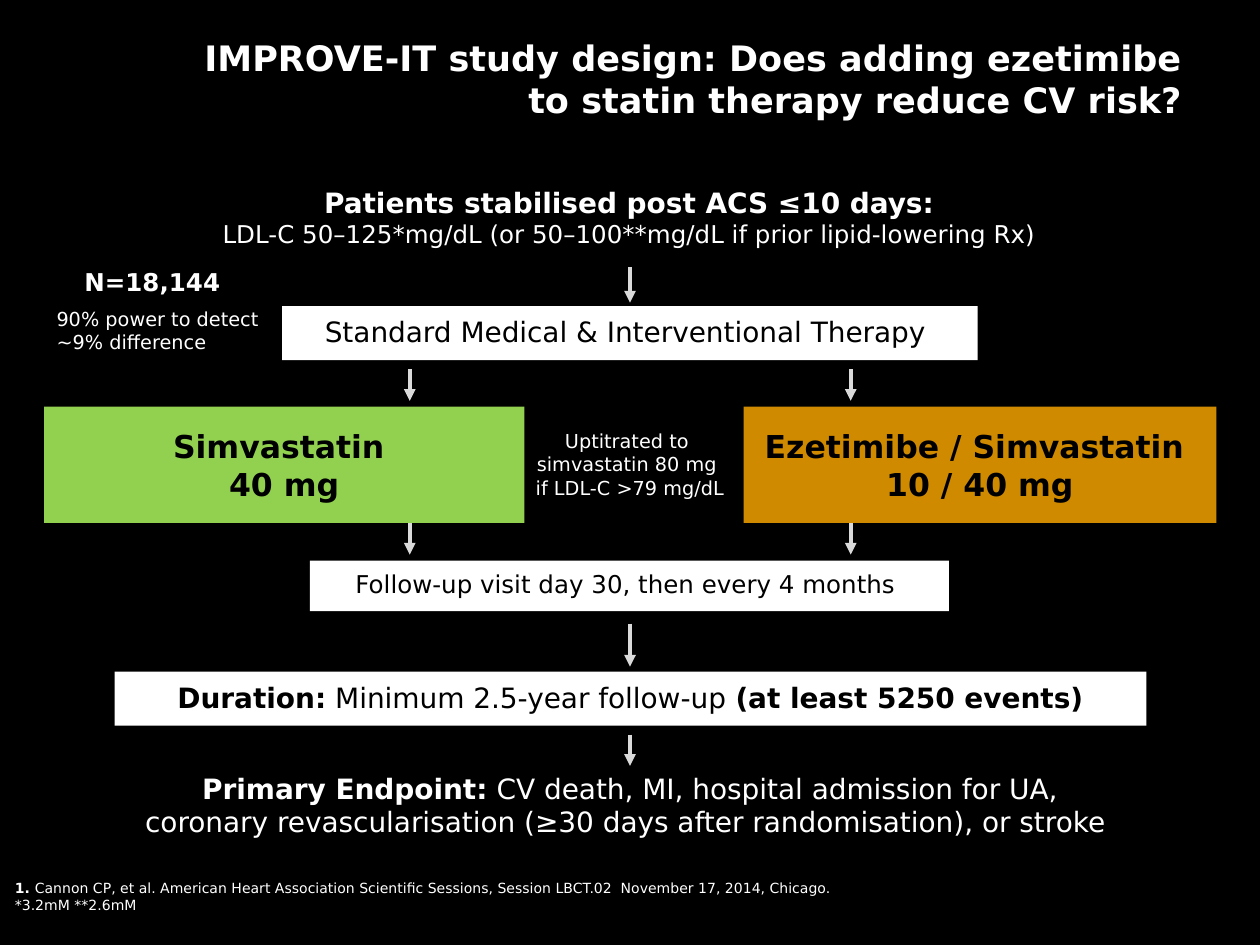
"""Build the IMPROVE-IT study design slide."""
import dataclasses
import typing

import lxml.etree
import pptx
import pptx.dml.color
import pptx.enum.shapes
import pptx.enum.text
import pptx.oxml.ns
import pptx.util

Cm = pptx.util.Cm
Align = pptx.enum.text.PP_ALIGN
Anchor = pptx.enum.text.MSO_ANCHOR
Fit = pptx.enum.text.MSO_AUTO_SIZE
Shape = pptx.enum.shapes.MSO_SHAPE
qn = pptx.oxml.ns.qn

BLACK = pptx.dml.color.RGBColor(0x00, 0x00, 0x00)
WHITE = pptx.dml.color.RGBColor(0xFF, 0xFF, 0xFF)
GREEN = pptx.dml.color.RGBColor(0x92, 0xD0, 0x50)
ORANGE = pptx.dml.color.RGBColor(0xCF, 0x8A, 0x00)
GREY = pptx.dml.color.RGBColor(0xDA, 0xDA, 0xDA)
FONT = "DejaVu Sans"
NO_INSETS = (0, 0, 0, 0)
BAR_INSETS = (0.25, 0.18, 0.25, 0.23)


class Span(typing.NamedTuple):
    text: str
    size: float
    bold: bool = False


@dataclasses.dataclass
class Box:
    place: tuple[float, float, float, float]
    paras: list[list[Span]]
    align: Align = Align.CENTER
    color: pptx.dml.color.RGBColor = WHITE
    fill: pptx.dml.color.RGBColor | None = None
    shape: Shape = Shape.RECTANGLE
    anchor: Anchor = Anchor.TOP
    insets: tuple[float, float, float, float] = (0.25, 0.13, 0.25, 0.13)
    wrap: bool = True
    fit: Fit = Fit.SHAPE_TO_FIT_TEXT


class Arrow(typing.NamedTuple):
    x: float
    top: float
    bottom: float


def set_all(target: typing.Any, values: dict[str, typing.Any]) -> None:
    """Set every named attribute on the target."""
    for name, value in values.items():
        setattr(target, name, value)


def write_text(shape: typing.Any, box: Box) -> None:
    """Place the shape and write the formatted paragraphs of the box."""
    set_all(shape, dict(zip(("left", "top", "width", "height"), map(Cm, box.place))))
    frame = shape.text_frame
    margins = ("margin_left", "margin_top", "margin_right", "margin_bottom")
    set_all(frame, dict(zip(margins, map(Cm, box.insets))))
    set_all(frame, {"word_wrap": box.wrap, "auto_size": box.fit, "vertical_anchor": box.anchor})
    for index, spans in enumerate(box.paras):
        para = frame.add_paragraph() if index else frame.paragraphs[0]
        para.alignment = box.align
        for span in spans:
            for number, line in enumerate(span.text.split("\n")):
                if number:
                    para.add_line_break()
                run = para.add_run()
                run.text = line
                set_all(run.font, {"name": FONT, "size": pptx.util.Pt(span.size), "bold": span.bold})
                run.font.color.rgb = box.color


def draw_box(page: typing.Any, box: Box) -> None:
    """Draw a filled shape, or a text box when there is no fill."""
    place = [Cm(length) for length in box.place]
    if box.fill is None:
        shape = page.shapes.add_textbox(*place)
    else:
        shape = page.shapes.add_shape(box.shape, *place)
        shape.shadow.inherit = False
        shape.fill.solid()
        shape.fill.fore_color.rgb = box.fill
        shape.line.fill.background()
        if box.shape == Shape.ROUNDED_RECTANGLE:
            shape.adjustments[0] = 0
    write_text(shape, box)


def draw_arrow(page: typing.Any, arrow: Arrow) -> None:
    """Draw a vertical arrow pointing down."""
    connector = page.shapes.add_connector(
        pptx.enum.shapes.MSO_CONNECTOR.STRAIGHT,
        Cm(arrow.x), Cm(arrow.top), Cm(arrow.x), Cm(arrow.bottom),
    )
    connector.line.color.rgb = GREY
    connector.line.width = pptx.util.Pt(2.25)
    properties = connector.element.spPr
    lxml.etree.SubElement(properties.find(qn("a:ln")), qn("a:tailEnd"), type="triangle")
    lxml.etree.SubElement(properties, qn("a:effectLst"))


def bar(place: tuple[float, float, float, float], *spans: Span) -> Box:
    """Describe a white bar with black text."""
    return Box(place, [list(spans)], color=BLACK, fill=WHITE, insets=BAR_INSETS)


def arm(left: float, width: float, text: str, fill: pptx.dml.color.RGBColor) -> Box:
    """Describe a treatment arm."""
    return Box((left, 8.2, width, 2.34), [[Span(text, 18, True)]], color=BLACK, fill=fill,
               shape=Shape.ROUNDED_RECTANGLE, anchor=Anchor.MIDDLE, fit=Fit.NONE)


TITLE = Box(
    (3.86, 0, 20.22, 3.18),
    [[Span("IMPROVE-IT study design: Does adding ezetimibe to statin therapy reduce CV risk?", 20, True)]],
    align=Align.RIGHT, anchor=Anchor.MIDDLE, fit=Fit.NONE,
)
BOXES = [
    Box((3.86, 3.61, 17.65, 1.55), [
        [Span("Patients stabilised post ACS ≤10 days:", 16, True)],
        [Span("LDL-C 50–125*mg/dL (or 50–100**mg/dL if prior lipid-lowering Rx)", 14)],
    ], wrap=False),
    bar((5.69, 6.17, 14.02, 1.09), Span("Standard Medical & Interventional Therapy ", 16)),
    arm(14.99, 9.53, "Ezetimibe / Simvastatin \n10 / 40 mg", ORANGE),
    arm(0.89, 9.68, "Simvastatin \n40 mg", GREEN),
    bar((6.25, 11.3, 12.88, 1.02), Span("Follow-up visit day 30, then every 4 months ", 14)),
    bar((2.31, 13.54, 20.8, 1.09), Span("Duration:", 16, True),
        Span(" Minimum 2.5-year follow-up ", 16), Span("(at least 5250 events)", 16, True)),
    Box((2.34, 15.42, 20.73, 1.63), [
        [Span("Primary Endpoint:", 16, True), Span(" CV death, MI, hospital admission for UA,", 16)],
        [Span("coronary revascularisation (≥30 days after randomisation), or stroke ", 16)],
    ], wrap=False),
    Box((1.7, 5.38, 2.82, 0.61), [[Span("N=18,144", 14, True)]],
        align=Align.LEFT, insets=NO_INSETS, wrap=False),
    Box((10.16, 8.53, 5.08, 1.68),
        [[Span("Uptitrated to \nsimvastatin 80 mg \nif LDL-C >79 mg/dL", 11)]]),
    Box((0.89, 6.07, 4.8, 1.19),
        [[Span("90% power to detect", 11)], [Span("~9% difference", 11)]],
        align=Align.LEFT, wrap=False),
    Box((0.3, 17.73, 17.6, 1.27), [
        [Span("1. ", 8, True),
         Span("Cannon CP, et al. American Heart Association Scientific Sessions, "
              "Session LBCT.02  November 17, 2014, Chicago.", 8)],
        [Span("*3.2mM **2.6mM", 8)],
    ], align=Align.LEFT, insets=NO_INSETS, wrap=False, fit=Fit.NONE),
]
ARM_ARROWS = [Arrow(x, top, top + 0.64) for top in (7.44, 10.54) for x in (17.15, 8.26)]
CENTRE_ARROWS = [Arrow(12.7, *ends) for ends in ((5.38, 6.1), (12.57, 13.44), (14.81, 15.44))]


def main() -> None:
    """Build and save the deck."""
    deck = pptx.Presentation()
    set_all(deck, {"slide_width": Cm(25.4), "slide_height": Cm(19.05)})
    page = deck.slides.add_slide(deck.slide_layouts.get_by_name("Title Only"))
    page.background.fill.solid()
    page.background.fill.fore_color.rgb = BLACK
    write_text(page.shapes.title, TITLE)
    for box in BOXES:
        draw_box(page, box)
    for arrow in ARM_ARROWS + CENTRE_ARROWS:
        draw_arrow(page, arrow)
    deck.save("out.pptx")


if __name__ == "__main__":
    main()
